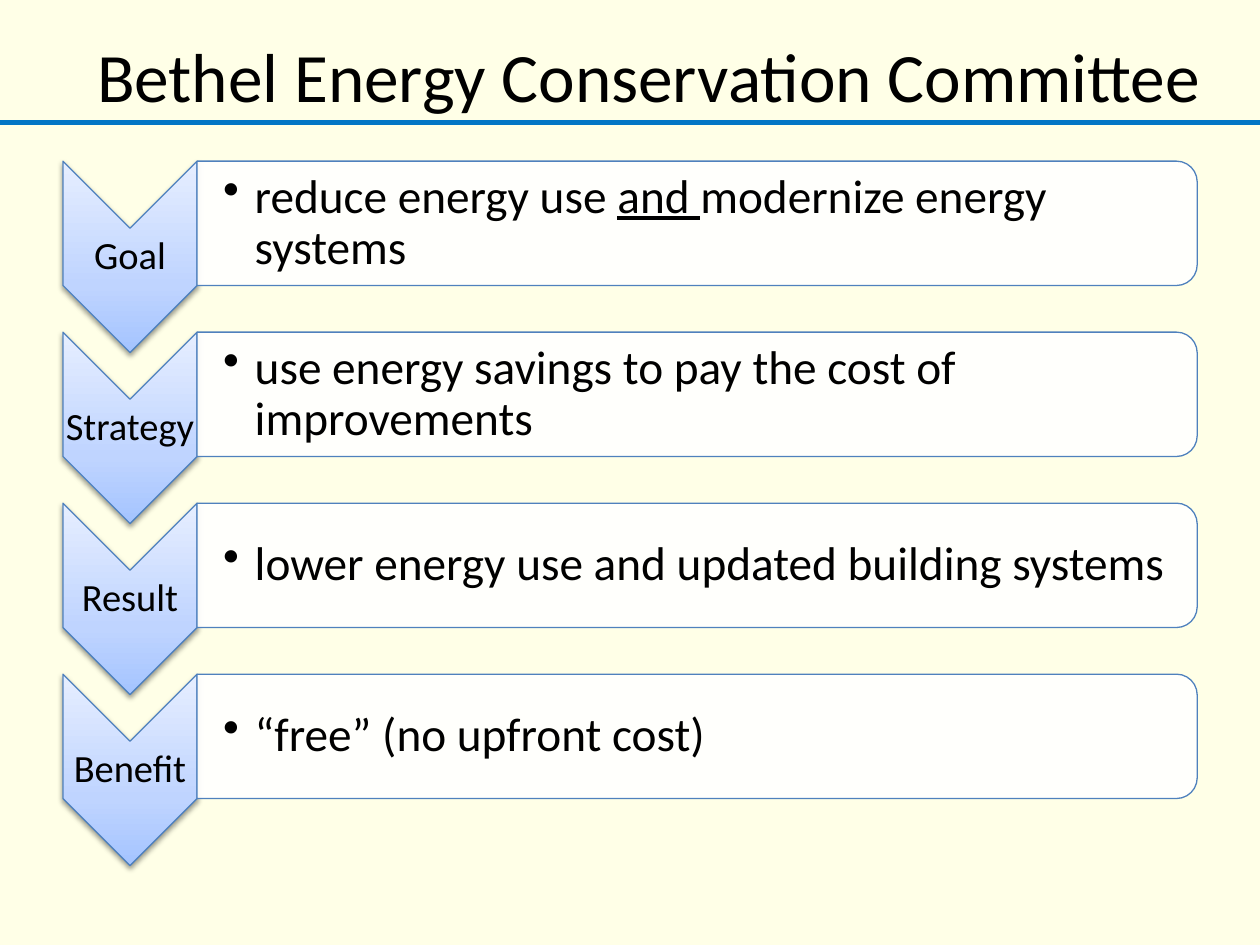
"""Build the committee slide: a title over four labelled chevron rows."""
from lxml.etree import SubElement
from pptx import Presentation
from pptx.dml.color import RGBColor
from pptx.enum.shapes import MSO_CONNECTOR, MSO_SHAPE
from pptx.enum.text import MSO_ANCHOR, MSO_AUTO_SIZE, PP_ALIGN
from pptx.oxml import parse_xml
from pptx.oxml.ns import nsdecls, qn
from pptx.util import Pt

TITLE = "Bethel Energy Conservation Committee"
ROWS = [
    ("Goal", ["reduce energy use ", ("and ", True), "modernize energy systems"]),
    ("Strategy", ["use energy savings to pay the cost of improvements"]),
    ("Result", ["lower energy use and updated building systems"]),
    ("Benefit", ["“free” (no upfront cost)"]),
]
GRADIENT = [(0, "A4C4FF"), (35, "BFD4FF"), (100, "E6EEFF")]
OUTLINE = "4F81BD"
LEFT, TOP, PITCH = 36, 92.1, 97.72
CHEVRON_W, CHEVRON_H = 76.6, 109.4
BAR_W, BAR_H = 571.5, 71.1
BAR_LEFT = LEFT + CHEVRON_W


def rgb(value):
    return RGBColor.from_string(value)


def write(sp, runs, size, align=PP_ALIGN.LEFT, insets=None, spacing=None, bullet=False):
    tf = sp.text_frame
    tf.word_wrap = True
    tf.auto_size = MSO_AUTO_SIZE.NONE
    tf.vertical_anchor = MSO_ANCHOR.MIDDLE
    if insets:
        tf.margin_left, tf.margin_top, tf.margin_right, tf.margin_bottom = map(Pt, insets)
    p = tf.paragraphs[0]
    p.alignment = align
    if spacing:
        p.line_spacing = spacing
    if bullet:
        pPr = p._p.get_or_add_pPr()
        pPr.set("marL", str(Pt(18)))
        pPr.set("indent", str(-Pt(18)))
        SubElement(pPr, qn("a:buChar"), char="•")
    for run in runs:
        text, underline = run if isinstance(run, tuple) else (run, None)
        r = p.add_run()
        r.text = text
        r.font.name, r.font.size, r.font.underline = "Calibri", Pt(size), underline
        r.font.color.rgb = rgb("000000")


def add_text(s, x, y, w, h, runs, size, **fmt):
    write(s.shapes.add_textbox(Pt(x), Pt(y), Pt(w), Pt(h)), runs, size, spacing=0.9, **fmt)


def add_turned(s, kind, x, y, w, h):
    """Add a preset turned by 90 degrees that covers the given upright box."""
    sp = s.shapes.add_shape(kind, Pt(x + (w - h) / 2), Pt(y + (h - w) / 2), Pt(h), Pt(w))
    sp.rotation = 90
    sp.shadow.inherit = False
    sp.fill.solid()
    sp.fill.fore_color.rgb = rgb("FFFFFF")
    sp.line.color.rgb = rgb(OUTLINE)
    sp.line.width = Pt(0.75)
    return sp


def add_chevron(s, x, y):
    sp = add_turned(s, MSO_SHAPE.CHEVRON, x, y, CHEVRON_W, CHEVRON_H)
    stops = "".join(f'<a:gs pos="{pos * 1000}"><a:srgbClr val="{color}"/></a:gs>'
                    for pos, color in GRADIENT)
    spPr = sp._element.spPr
    spPr.replace(spPr.find(qn("a:solidFill")), parse_xml(
        f'<a:gradFill {nsdecls("a")} rotWithShape="0"><a:gsLst>{stops}</a:gsLst>'
        '<a:lin ang="16200000" scaled="0"/></a:gradFill>'))
    spPr.find(qn("a:effectLst")).append(parse_xml(
        f'<a:outerShdw {nsdecls("a")} blurRad="{Pt(3.1)}" dist="{Pt(1.6)}" dir="5400000" '
        'rotWithShape="0"><a:srgbClr val="000000"><a:alpha val="38000"/></a:srgbClr></a:outerShdw>'))


def add_bar(s, x, y):
    sp = add_turned(s, MSO_SHAPE.ROUND_2_SAME_RECTANGLE, x, y, BAR_W, BAR_H)
    color = sp._element.spPr.find(qn("a:solidFill")).find(qn("a:srgbClr"))
    SubElement(color, qn("a:alpha"), val="90000")


def main():
    prs = Presentation()
    prs.slide_width, prs.slide_height = Pt(720), Pt(540)
    s = prs.slides.add_slide(prs.slide_layouts[5])
    s.background.fill.solid()
    s.background.fill.fore_color.rgb = rgb("FFFFE7")

    rule = s.shapes.add_connector(MSO_CONNECTOR.STRAIGHT, 0, Pt(70), Pt(720), Pt(70))
    rule.line.color.rgb = rgb("0376C5")
    rule.line.width = Pt(3)
    SubElement(rule._element.spPr, qn("a:effectLst"))

    title = s.shapes.title
    title.left, title.top, title.width, title.height = Pt(36), Pt(19), Pt(669.6), Pt(47.5)
    write(title, [TITLE], 39.6, align=PP_ALIGN.CENTER)

    for i, (label, runs) in enumerate(ROWS):
        y = TOP + i * PITCH
        add_chevron(s, LEFT, y)
        add_text(s, LEFT, y + CHEVRON_W / 2, CHEVRON_W, CHEVRON_H - CHEVRON_W, [label], 22,
                 align=PP_ALIGN.CENTER, insets=(1.4, 1.4, 1.4, 1.4))
        add_bar(s, BAR_LEFT, y)
        add_text(s, BAR_LEFT, y + 3.5, BAR_W - 3.5, BAR_H - 7, runs, 27,
                 insets=(15, 1.4, 1.4, 1.4), bullet=True)

    prs.save("out.pptx")


if __name__ == "__main__":
    main()
